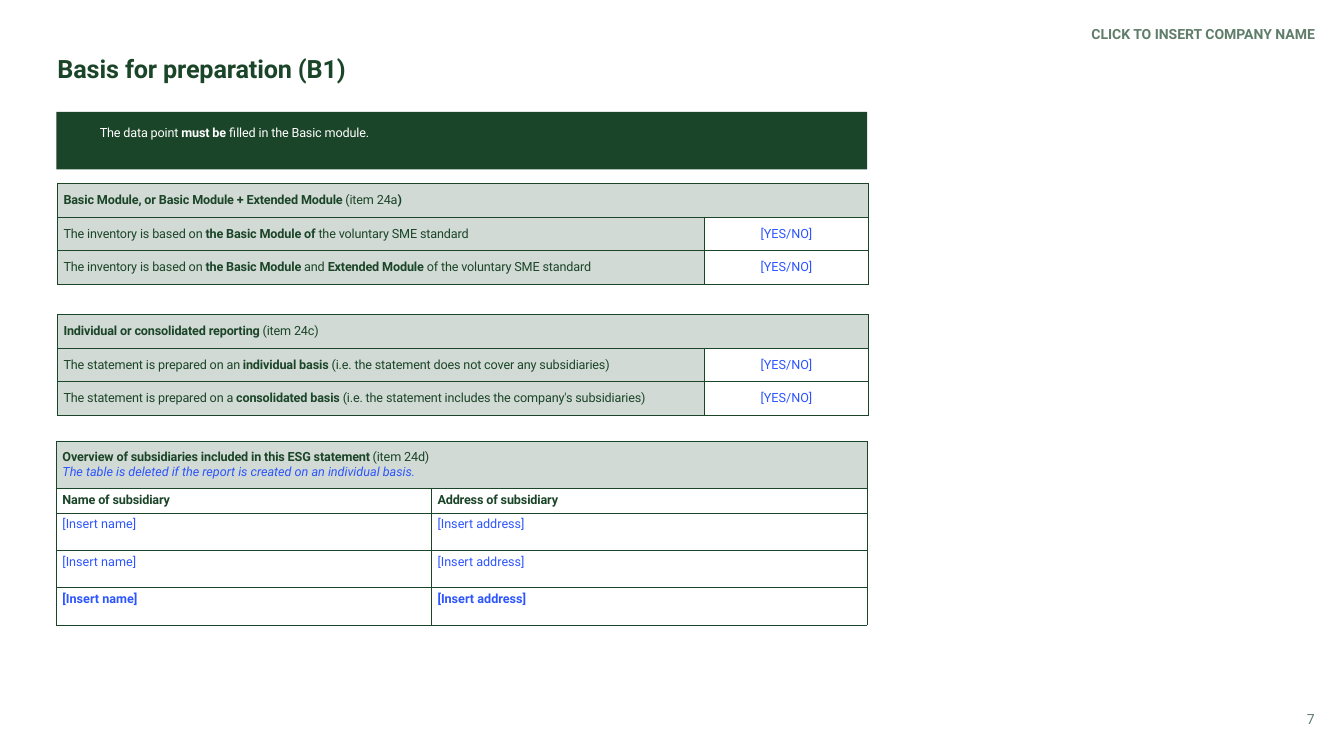
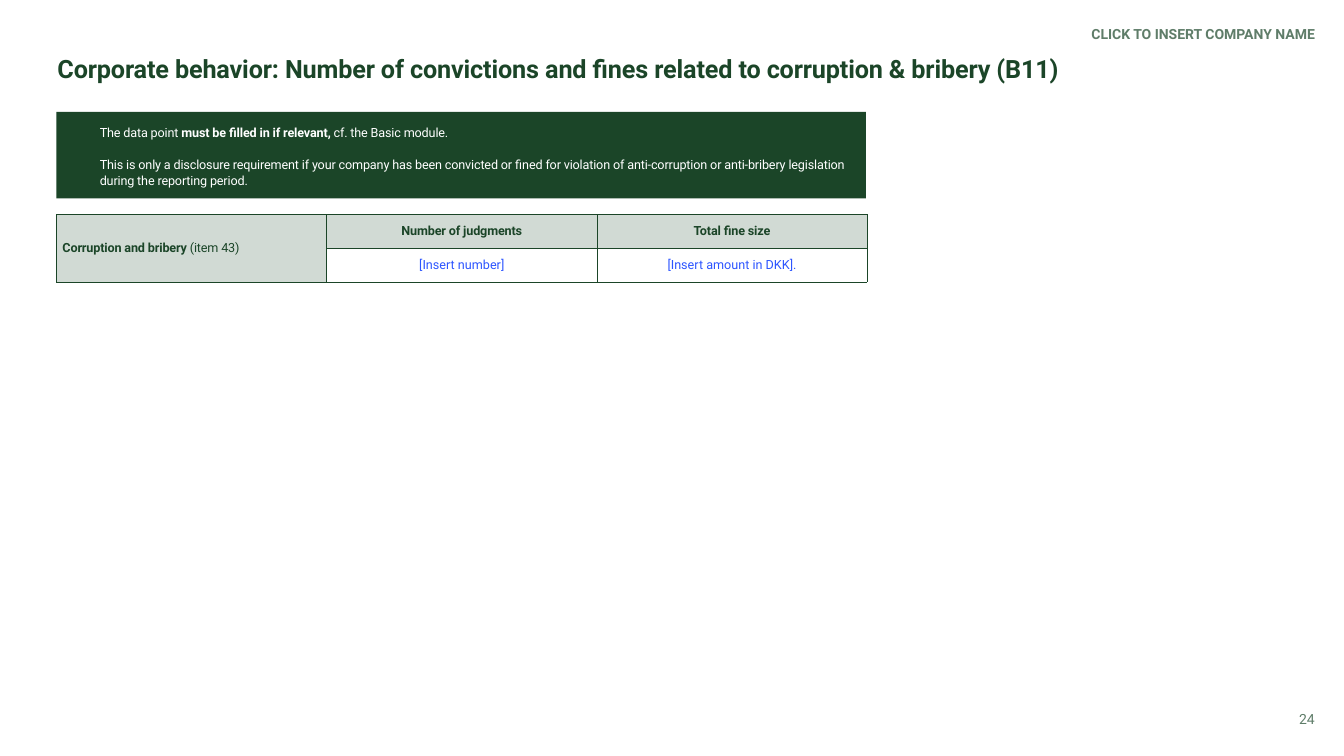
from dataclasses import dataclass

from lxml.etree import SubElement
from pptx import Presentation
from pptx.dml.color import RGBColor
from pptx.enum.shapes import MSO_SHAPE as Shape
from pptx.enum.text import MSO_ANCHOR as Anchor, PP_ALIGN as Align
from pptx.oxml.ns import qn
from pptx.util import Inches, Pt

GREEN = RGBColor(0x1B, 0x45, 0x28)
SOFT_GREEN = RGBColor(0x5F, 0x7D, 0x69)
PALE_GREEN = RGBColor(0xD1, 0xDA, 0xD4)
BLUE = RGBColor(0x2D, 0x55, 0xFF)
WHITE = RGBColor(0xFF, 0xFF, 0xFF)

FONT = "Roboto"
BODY_SIZE = 9
TIGHT = -10  # letter spacing in hundredths of a point
LEFT = 0.56
ROW = 0.33
BANNER_TOP = 1.11


@dataclass
class Style:
    color: RGBColor = GREEN
    size: int = BODY_SIZE
    align: Align = Align.LEFT
    italic: bool = False
    spacing: int = TIGHT


@dataclass
class Cell:
    lines: list
    fill: RGBColor = PALE_GREEN
    anchor: Anchor = Anchor.MIDDLE
    across: int = 1
    down: int = 1


LABEL = Style()
CENTRED = Style(align=Align.CENTER)
ENTRY = Style(color=BLUE, spacing=0)
CENTRED_ENTRY = Style(color=BLUE, align=Align.CENTER, spacing=0)
HINT = Style(color=BLUE, italic=True, spacing=0)
TITLE = Style(size=18)
BANNER = Style(color=WHITE)
MARGINAL = Style(color=SOFT_GREEN, size=10, align=Align.RIGHT, spacing=0)


def write_para(para, markup, style):
    """Write one paragraph; ** switches bold on and off."""
    para.alignment = style.align
    for index, text in enumerate(markup.split("**")):
        if not text:
            continue
        span = para.add_run()
        span.text = text
        font = span.font
        font.name = FONT
        font.size = Pt(style.size)
        font.bold = index % 2 == 1
        font.italic = style.italic
        font.color.rgb = style.color
        if style.spacing:
            font._element.set("spc", str(style.spacing))


def write_lines(frame, lines):
    """Fill a text frame with (markup, style) pairs."""
    for index, (markup, style) in enumerate(lines):
        para = frame.add_paragraph() if index else frame.paragraphs[0]
        write_para(para, markup, style)


def set_margins(target, left, top, right, bottom):
    target.margin_left, target.margin_top = Inches(left), Inches(top)
    target.margin_right, target.margin_bottom = Inches(right), Inches(bottom)


def add_text(page, left, top, width, height, markup, style):
    box = page.shapes.add_textbox(Inches(left), Inches(top), Inches(width), Inches(height))
    frame = box.text_frame
    frame.word_wrap = True
    set_margins(frame, 0, 0, 0, 0)
    write_lines(frame, [(markup, style)])
    return frame


def add_page(deck, title, number):
    """Add a page with title, company name and page number."""
    page = deck.slides.add_slide(deck.slide_layouts[6])
    frame = add_text(page, 0.57, 0.56, 12.21, 0.27, f"**{title}**", TITLE)
    frame.paragraphs[0].line_spacing = 0.9
    add_text(page, 9.06, 0.25, 3.98, 0.17, "**CLICK TO INSERT COMPANY NAME**", MARGINAL)
    add_text(page, 10.04, 7.05, 3, 0.17, str(number), MARGINAL)
    return page


def add_banner(page, width, height, texts):
    banner = page.shapes.add_shape(
        Shape.RECTANGLE, Inches(LEFT), Inches(BANNER_TOP), Inches(width), Inches(height))
    banner.shadow.inherit = False
    banner.fill.solid()
    banner.fill.fore_color.rgb = GREEN
    banner.line.fill.background()
    frame = banner.text_frame
    frame.word_wrap = True
    frame.vertical_anchor = Anchor.TOP
    set_margins(frame, 0.43, 0.12, 0.12, 0.16)
    write_lines(frame, [(text, BANNER) for text in texts])
    for index, para in enumerate(frame.paragraphs):
        para.line_spacing = 1.06
        para.space_before = Pt(11.4 if index else 0)


def set_borders(cell):
    properties = cell._tc.get_or_add_tcPr()
    for side in ("a:lnL", "a:lnR", "a:lnT", "a:lnB"):
        line = SubElement(properties, qn(side), w=str(Pt(0.5)))
        fill = SubElement(line, qn("a:solidFill"))
        SubElement(fill, qn("a:srgbClr"), val=str(GREEN))


def add_grid(page, left, top, widths, heights, rows):
    """Add a bordered table; None marks a cell covered by a merged one."""
    graphic = page.shapes.add_table(
        len(rows), len(widths), Inches(left), Inches(top),
        Inches(sum(widths)), Inches(sum(heights)))
    table = graphic.table
    table.first_row = table.horz_banding = False
    for column, width in zip(table.columns, widths):
        column.width = Inches(width)
    for row, height in zip(table.rows, heights):
        row.height = Inches(height)
    for y, row in enumerate(rows):
        for x, content in enumerate(row):
            cell = table.cell(y, x)
            set_borders(cell)
            if content is None:
                continue
            set_margins(cell, 0.06, 0.04, 0.06, 0.04)
            cell.vertical_anchor = content.anchor
            cell.fill.solid()
            cell.fill.fore_color.rgb = content.fill
            write_lines(cell.text_frame, content.lines)
            if content.across * content.down > 1:
                cell.merge(table.cell(y + content.down - 1, x + content.across - 1))


def add_choices(page, top, heading, statements):
    """Add a heading row and a yes/no row for each statement."""
    answer = Cell([("[YES/NO]", CENTRED_ENTRY)], WHITE)
    rows = [[Cell([(heading, LABEL)], across=2), None]]
    rows += [[Cell([(statement, LABEL)]), answer] for statement in statements]
    add_grid(page, 0.57, top, [6.42, 1.62], [1 / 3] * len(rows), rows)


def add_subsidiaries(page, top):
    heading = Cell([
        ("**Overview of subsidiaries included in this ESG statement **(item 24d)", LABEL),
        ("The table is deleted if the report is created on an individual basis.", HINT),
    ], across=2)
    names = [Cell([(f"**{part} of subsidiary**", LABEL)], WHITE)
             for part in ("Name", "Address")]
    rows = [[heading, None], names]
    for mark in ("", "", "**"):
        rows.append([Cell([(f"{mark}[Insert {part}]{mark}", ENTRY)], WHITE, Anchor.TOP)
                     for part in ("name", "address")])
    add_grid(page, LEFT, top, [3.72, 4.32], [0.46, 0.25] + [0.37] * 3, rows)


def add_convictions(page, top):
    rows = [
        [Cell([("**Corruption and bribery **(item 43)", LABEL)], down=2),
         Cell([("**Number of judgments**", CENTRED)]),
         Cell([("**Total fine size**", CENTRED)])],
        [None,
         Cell([("[Insert number]", CENTRED_ENTRY)], WHITE),
         Cell([("[Insert amount in DKK].", CENTRED_ENTRY)], WHITE)],
    ]
    add_grid(page, LEFT, top, [2.68] * 3, [1 / 3] * 2, rows)


def build_preparation(deck):
    page = add_page(deck, "Basis for preparation (B1)", 7)
    add_banner(page, 8.04, 0.57, ["The data point **must be **filled in the Basic module."])
    add_choices(page, 1.82, "**Basic Module, or Basic Module + Extended Module **(item 24a**)**", [
        "The inventory is based on **the Basic Module of **the voluntary SME standard",
        "The inventory is based on **the Basic Module **and **Extended Module **"
        "of the voluntary SME standard",
    ])
    add_choices(page, 3.12, "**Individual or consolidated reporting **(item 24c)", [
        "The statement is prepared on an **individual basis **"
        "(i.e. the statement does not cover any subsidiaries)",
        "The statement is prepared on a **consolidated basis **"
        "(i.e. the statement includes the company's subsidiaries)",
    ])
    add_subsidiaries(page, 4.38)


def build_corruption(deck):
    page = add_page(deck, "Corporate behavior: Number of convictions and fines "
                          "related to corruption & bribery (B11)", 24)
    add_banner(page, 8.03, 0.86, [
        "The data point **must be filled in if relevant, **cf. the Basic module.",
        "This is only a disclosure requirement if your company has been convicted or fined "
        "for violation of anti-corruption or anti-bribery legislation during the reporting "
        "period.",
    ])
    add_convictions(page, 2.13)


def main():
    deck = Presentation()
    deck.slide_width, deck.slide_height = Inches(13.33), Inches(7.5)
    build_preparation(deck)
    build_corruption(deck)
    deck.save("out.pptx")


if __name__ == "__main__":
    main()
